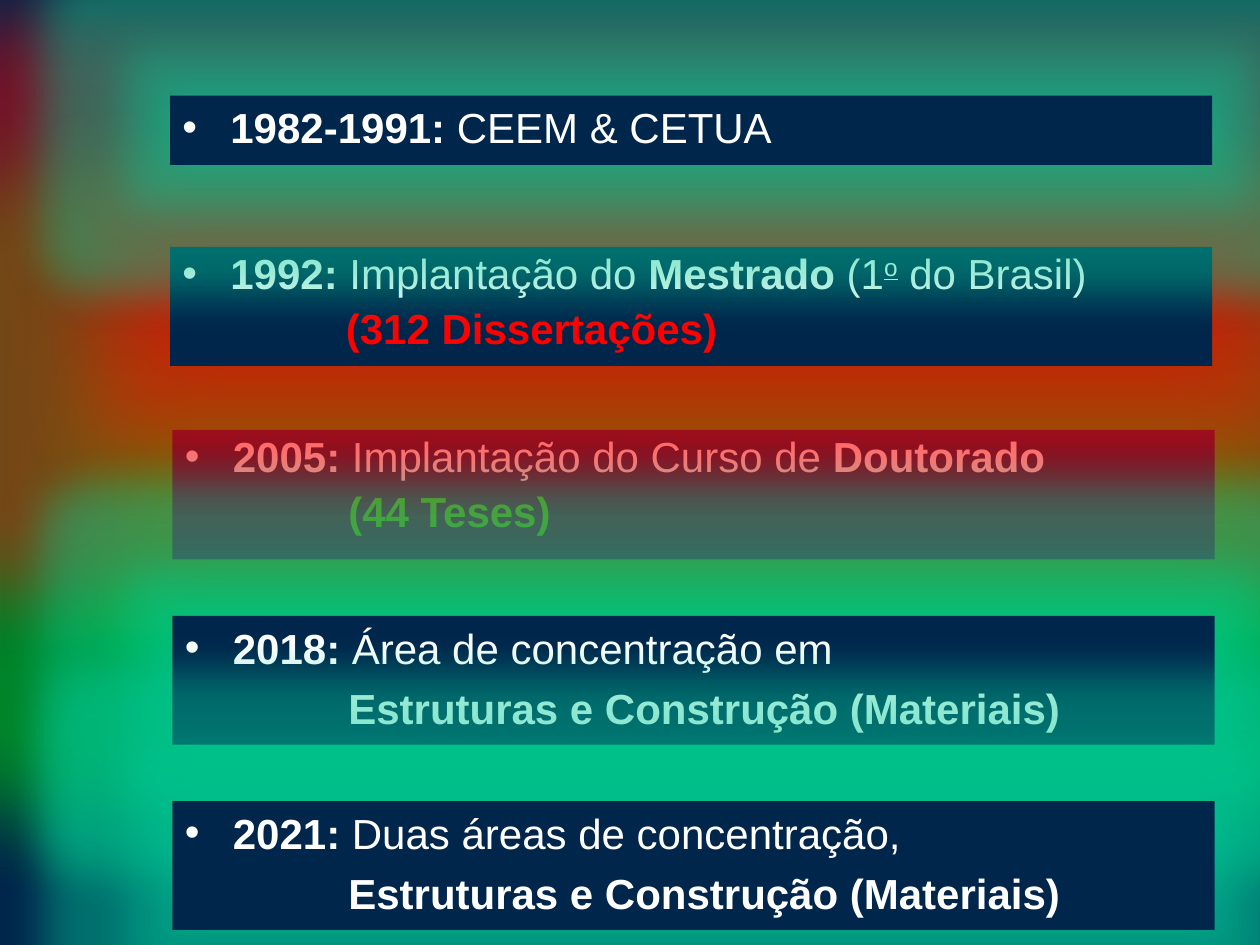
from lxml.etree import SubElement
from pptx import Presentation
from pptx.dml.color import RGBColor
from pptx.enum.shapes import MSO_SHAPE
from pptx.enum.text import MSO_ANCHOR, PP_ALIGN
from pptx.oxml.ns import qn
from pptx.util import Pt

COLORS = {"navy": "00264C", "white": "FFFFFF", "red": "FF0000",
          "lime": "00FF00", "teal": "00CC99"}
BASE = {"name": "Arial", "size": Pt(24)}
GLOWS = {"teal": (50, 18), "red": (88, 34), "lime": (101, 40)}
WIDTH = 595.5
HANG = 27.4
INDENT = 93.4
AREA = [("Estruturas e Construção (Materiais)", "white", {"bold": True})]
BOLD, PLAIN = {"bold": True}, {"bold": False}

EVENTS = [
    ((98.6, 245.6, WIDTH, 74), "lime", 0.9, [
        [("2005:", "white", BOLD),
         (" Implantação do Curso de ", "white", PLAIN),
         ("Doutorado", "white", BOLD)],
        [("(44 Teses)", "lime", BOLD)]]),
    ((97.2, 141.1, WIDTH, 68), "red", 0.9, [
        [("1992:", "white", BOLD),
         (" Implantação do ", "white", PLAIN),
         ("Mestrado", "white", BOLD),
         (" (1", "white", PLAIN),
         ("o", "white", {"bold": False, "underline": True, "raise": 30000}),
         (" do Brasil)", "white", PLAIN)],
        [("(312 Dissertações)", "red", BOLD)]]),
    ((97.2, 54.6, WIDTH, 39.7), "teal", 1.0, [
        [("1982-1991:", "white", BOLD),
         (" CEEM & CETUA", "white", PLAIN)]]),
    ((98.6, 352, WIDTH, 73.6), "teal", 1.0, [
        [("2018:", "white", BOLD),
         (" Área de concentração em", "white", PLAIN)],
        AREA]),
    ((98.6, 457.8, WIDTH, 73.6), "teal", 1.0, [
        [("2021:", "white", BOLD),
         (" Duas áreas de concentração,", "white", PLAIN)],
        AREA]),
]


def shade(fill, name):
    fill.solid()
    fill.fore_color.rgb = RGBColor.from_string(COLORS[name])


def add_glow(shape, name):
    shape.shadow.inherit = False
    effects = shape._element.spPr.find(qn("a:effectLst"))
    wide, near = GLOWS[name]
    for tag, key, size in (("a:glow", "rad", wide),
                           ("a:outerShdw", "blurRad", near)):
        effect = SubElement(effects, qn(tag), {key: str(Pt(size))})
        if tag == "a:outerShdw":
            effect.set("dist", "0")
            effect.set("algn", "ctr")
            effect.set("rotWithShape", "0")
        tint = SubElement(effect, qn("a:srgbClr"), val=COLORS[name])
        SubElement(tint, qn("a:alpha"), val="40000")


def add_run(para, text, color, style):
    run = para.add_run()
    run.text = text
    for key, value in (BASE | style).items():
        if key == "raise":
            run.font._element.set("baseline", str(value))
        else:
            setattr(run.font, key, value)
    run.font.color.rgb = RGBColor.from_string(COLORS[color])


def set_para(para, first, spacing):
    form = {"alignment": PP_ALIGN.LEFT, "line_spacing": spacing,
            "space_before": Pt(0 if first else 5.5)}
    for key, value in form.items():
        setattr(para, key, value)
    props = para._p.get_or_add_pPr()
    props.set("marL", str(Pt(HANG if first else INDENT)))
    props.set("indent", str(Pt(-HANG if first else 0)))
    if first:
        SubElement(props, qn("a:buFont"), typeface="Arial")
        SubElement(props, qn("a:buChar"), char="•")


def add_event(slide, box, glow, spacing, lines):
    shape = slide.shapes.add_shape(MSO_SHAPE.RECTANGLE, *map(Pt, box))
    shade(shape.fill, "navy")
    shape.line.fill.background()
    add_glow(shape, glow)
    frame = shape.text_frame
    form = {"word_wrap": True, "vertical_anchor": MSO_ANCHOR.TOP}
    for key, value in form.items():
        setattr(frame, key, value)
    for row, runs in enumerate(lines):
        para = frame.add_paragraph() if row else frame.paragraphs[0]
        set_para(para, row == 0, spacing)
        for run in runs:
            add_run(para, *run)


def main():
    deck = Presentation()
    deck.slide_width, deck.slide_height = Pt(720), Pt(540)
    slide = deck.slides.add_slide(deck.slide_layouts[6])
    shade(slide.background.fill, "navy")
    for event in EVENTS:
        add_event(slide, *event)
    deck.save("out.pptx")


if __name__ == "__main__":
    main()
